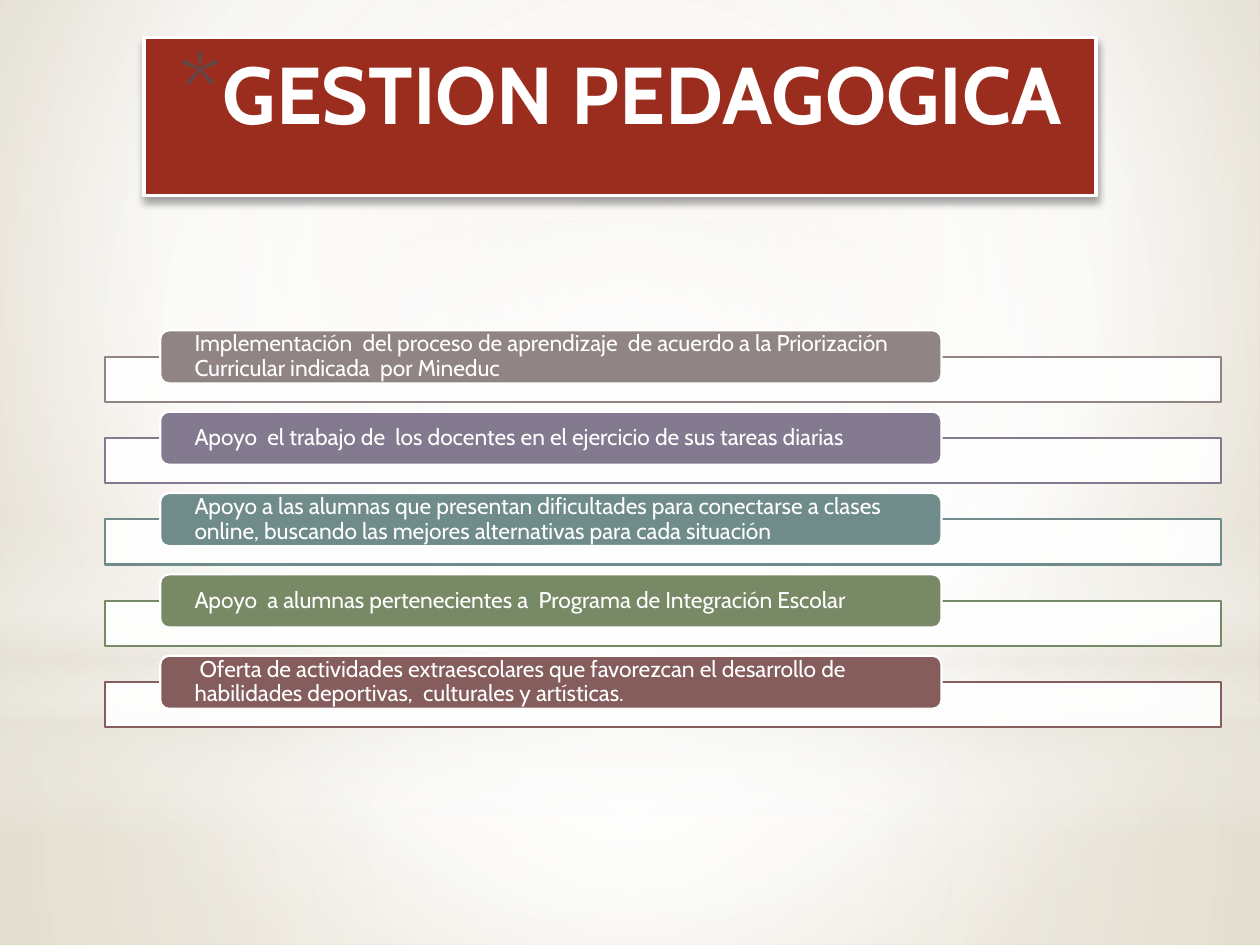
from lxml.etree import SubElement
from pptx import Presentation
from pptx.dml.color import RGBColor
from pptx.enum.shapes import MSO_SHAPE as Preset
from pptx.enum.text import MSO_ANCHOR as Anchor, MSO_AUTO_SIZE as AutoSize, PP_ALIGN as Align
from pptx.oxml.ns import qn
from pptx.util import Cm, Pt

WHITE = RGBColor(0xFF, 0xFF, 0xFF)
CREAM = RGBColor(0xE9, 0xE5, 0xDC)
SAND = RGBColor(0xE3, 0xDD, 0xCF)
TAN = RGBColor(0xCD, 0xBF, 0x9F)
BRICK = RGBColor(0x9B, 0x2D, 0x1F)
BROWN = RGBColor(0x64, 0x46, 0x46)
BLACK = RGBColor(0, 0, 0)
TAUPE = RGBColor(0x91, 0x84, 0x85)
MAUVE = RGBColor(0x83, 0x7A, 0x8F)
TEAL = RGBColor(0x6F, 0x8C, 0x8B)
OLIVE = RGBColor(0x78, 0x89, 0x66)
ROSE = RGBColor(0x85, 0x5D, 0x5D)

CENTRE = (50, 50, 50, 50)
VEILS = [
    (Preset.RECTANGLE, 14.17, 4.88,
     [(0, WHITE, 91), (37, WHITE, 76), (100, CREAM, 79)], CENTRE),
    (Preset.RECTANGLE, 0, 14.17,
     [(0, WHITE, 89), (48, WHITE, 62), (100, CREAM, 79)], CENTRE),
    (Preset.RECTANGLE, 10.46, 6.35,
     [(0, WHITE, 0), (29, WHITE, 30), (45, CREAM, 40), (55, WHITE, 26),
      (65, CREAM, 60), (100, WHITE, 0)], None),
    (Preset.OVAL, 4.45, 14.17, [(0, WHITE, 100), (56, WHITE, 0)], CENTRE),
]
ACTIONS = [
    ("Implementación  del proceso de aprendizaje  de acuerdo a la Priorización "
     "Curricular indicada  por Mineduc", TAUPE),
    ("Apoyo  el trabajo de  los docentes en el ejercicio de sus tareas diarias", MAUVE),
    ("Apoyo a las alumnas que presentan dificultades para conectarse a clases "
     "online, buscando las mejores alternativas para cada situación", TEAL),
    ("Apoyo  a alumnas pertenecientes a  Programa de Integración Escolar", OLIVE),
    (" Oferta de actividades extraescolares que favorezcan el desarrollo de  "
     "habilidades deportivas,  culturales y artísticas.", ROSE),
]
FIRST_ROW, ROW_PITCH, FRAME_DROP = 6.66, 1.64, 0.53


def apply(target, values):
    for name, value in values.items():
        setattr(target, name, value)


def add_color(parent, color, alpha):
    node = SubElement(parent, qn("a:srgbClr"), val=str(color))
    if alpha < 100:
        SubElement(node, qn("a:alpha"), val=str(alpha * 1000))


class SlideBuilder:
    title_font = {"name": "Cabin", "size": Pt(46), "bold": True}
    action_font = {"name": "Cabin", "size": Pt(13), "bold": False}
    title_frame = {"word_wrap": True, "vertical_anchor": Anchor.TOP,
                   "auto_size": AutoSize.NONE}
    action_frame = {"word_wrap": True, "vertical_anchor": Anchor.MIDDLE,
                    "margin_left": Cm(0.64), "margin_right": Cm(0.64),
                    "margin_top": 0, "margin_bottom": 0}

    def __init__(self, slide):
        self.slide = slide

    def gradient(self, holder, element, stops, focus):
        holder.fill.gradient()
        grad = element.find(".//" + qn("a:gradFill"))
        grad.clear()
        stop_list = SubElement(grad, qn("a:gsLst"))
        for position, color, alpha in stops:
            stop = SubElement(stop_list, qn("a:gs"), pos=str(position * 1000))
            add_color(stop, color, alpha)
        if focus is None:
            SubElement(grad, qn("a:lin"), ang="5400000", scaled="0")
            return
        radial = SubElement(grad, qn("a:path"), path="circle")
        sides = {side: str(share * 1000) for side, share in zip("ltrb", focus)}
        SubElement(radial, qn("a:fillToRect"), **sides)

    def background(self, stops, focus):
        self.gradient(self.slide.background, self.slide.element, stops, focus)

    def box(self, preset, left, top, width, height):
        shape = self.slide.shapes.add_shape(preset, Cm(left), Cm(top), Cm(width), Cm(height))
        shape.shadow.inherit = False
        return shape

    def veil(self, preset, top, height, stops, focus):
        veil = self.box(preset, 0, top, 25.4, height)
        self.gradient(veil, veil.element, stops, focus)
        veil.line.fill.background()

    def paint(self, shape, fill, line, width):
        shape.fill.solid()
        shape.fill.fore_color.rgb = fill
        shape.line.color.rgb = line
        shape.line.width = Pt(width)

    def label(self, shape, text, frame_format, font_format, align):
        frame = shape.text_frame
        apply(frame, frame_format)
        paragraph = frame.paragraphs[0]
        paragraph.alignment = align
        run = paragraph.add_run()
        run.text = text
        apply(run.font, font_format)
        run.font.color.rgb = WHITE
        return paragraph

    def heading(self, text):
        title = self.slide.shapes.title
        title.element.getparent().append(title.element)
        apply(title, {"left": Cm(2.9), "top": Cm(0.76), "width": Cm(19.2), "height": Cm(3.18)})
        self.paint(title, BRICK, WHITE, 2)
        effects = SubElement(title.element.spPr, qn("a:effectLst"))
        shadow = SubElement(effects, qn("a:outerShdw"), blurRad="50800", dist="38100",
                            dir="5400000", algn="t", rotWithShape="0")
        add_color(shadow, BLACK, 35)
        paragraph = self.label(title, text, self.title_frame, self.title_font, Align.CENTER)
        props = paragraph._p.get_or_add_pPr()
        props.set("marL", str(Cm(0.89)))
        props.set("indent", str(-Cm(0.89)))
        add_color(SubElement(props, qn("a:buClr")), BROWN, 100)
        SubElement(props, qn("a:buSzPct"), val="128000")
        SubElement(props, qn("a:buFont"), typeface="Cabin")
        SubElement(props, qn("a:buChar"), char="*")

    def action(self, top, text, color):
        frame = self.box(Preset.RECTANGLE, 2.11, top + FRAME_DROP, 22.5, 0.91)
        self.paint(frame, WHITE, color, 1.25)
        tint = frame.element.spPr.find(qn("a:solidFill")).find(qn("a:srgbClr"))
        SubElement(tint, qn("a:alpha"), val="90000")
        pill = self.box(Preset.ROUNDED_RECTANGLE, 3.23, top, 15.75, 1.07)
        self.paint(pill, color, WHITE, 1.25)
        paragraph = self.label(pill, text, self.action_frame, self.action_font, Align.LEFT)
        paragraph.line_spacing = 0.9


def main():
    deck = Presentation()
    apply(deck, {"slide_width": Cm(25.4), "slide_height": Cm(19.05)})
    builder = SlideBuilder(deck.slides.add_slide(deck.slide_layouts[5]))
    builder.background([(0, SAND, 100), (60, WHITE, 100), (100, TAN, 100)], (20, 10, 20, 60))
    for veil in VEILS:
        builder.veil(*veil)
    builder.heading("GESTION PEDAGOGICA")
    for row, (text, color) in enumerate(ACTIONS):
        builder.action(FIRST_ROW + row * ROW_PITCH, text, color)
    deck.save("out.pptx")


if __name__ == "__main__":
    main()
